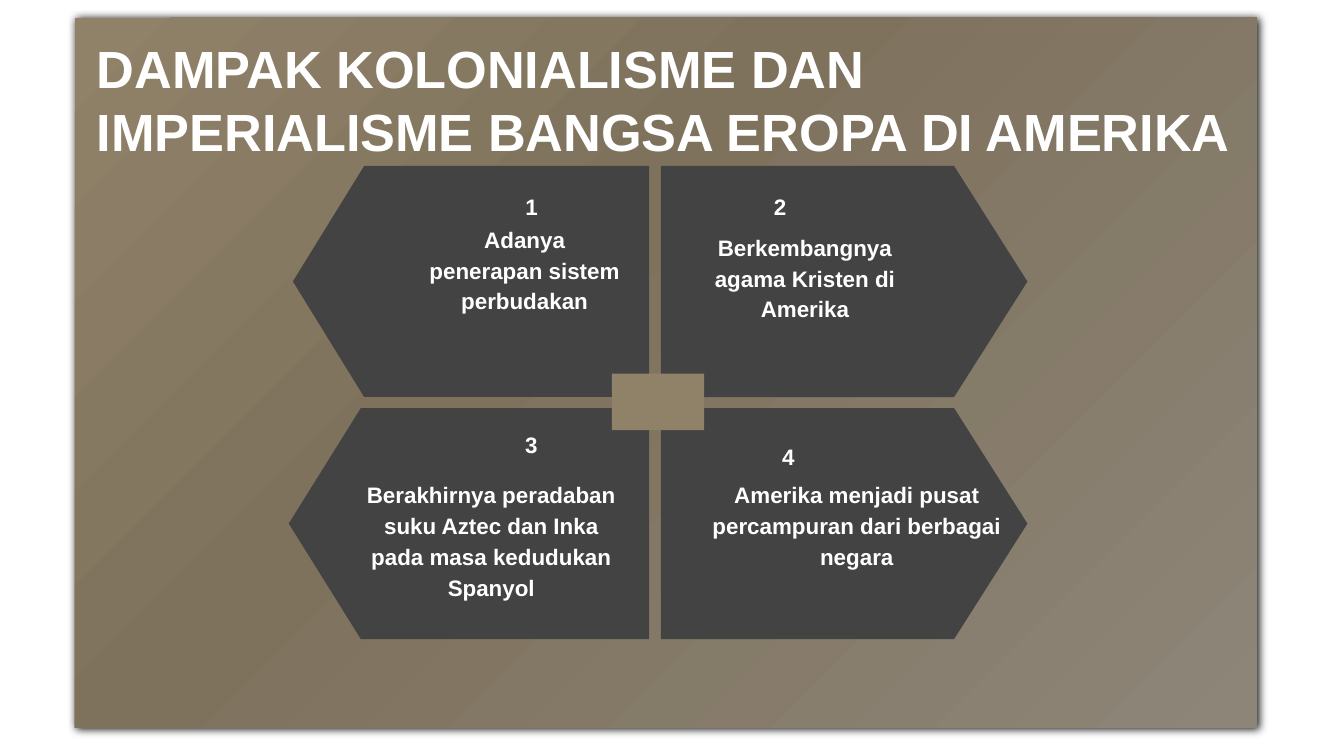
import lxml.etree
import pptx
import pptx.dml.color
import pptx.enum.shapes
import pptx.enum.text
import pptx.oxml
import pptx.util

Pt = pptx.util.Pt
MSO_SHAPE = pptx.enum.shapes.MSO_SHAPE
PP_ALIGN = pptx.enum.text.PP_ALIGN
MSO_ANCHOR = pptx.enum.text.MSO_ANCHOR

COLORS = {"white": "FFFFFF", "card": "434343", "center": "908269",
          "panel_start": "908269", "panel_middle": "7F725D",
          "panel_end": "8D8578", "shadow": "000000"}
FONT = "Arial"
TITLE = "DAMPAK KOLONIALISME DAN IMPERIALISME BANGSA EROPA DI AMERIKA"

# Boxes are (left, top, width, height) in points.
TITLE_BOX = (44.64, 12.24, 628.5, 82)
PANEL_BOX = (40.2, 9.6, 633.2, 380.2)
CENTER_BOX = (327.8, 200.2, 49.4, 30.2)
LEFT_EDGE, RIGHT_EDGE = 347.7, 354
ROW_TOPS = (88.9, 218.6)
CARD_HEIGHT = 123.8
IMPACTS = [
    {"number": "1", "text": "Adanya penerapan sistem perbudakan",
     "row": 0, "points_left": True, "length": 190.8,
     "number_box": (232.6, 95.8, 104.4, 30.2), "text_box": (221, 111.6, 120.2, 59)},
    {"number": "2", "text": "Berkembangnya agama Kristen di Amerika",
     "row": 0, "points_left": False, "length": 196.4,
     "number_box": (368.6, 95.8, 98.6, 30.2), "text_box": (360.7, 115.9, 141.1, 86.4)},
    {"number": "3", "text": "Berakhirnya peradaban suku Aztec dan Inka pada masa kedudukan Spanyol",
     "row": 1, "points_left": True, "length": 193,
     "number_box": (235.4, 223.2, 98.6, 30.2), "text_box": (189.4, 248.4, 147.6, 59)},
    {"number": "4", "text": "Amerika menjadi pusat percampuran dari berbagai negara",
     "row": 1, "points_left": False, "length": 196.4,
     "number_box": (373, 229.7, 98.6, 30.2), "text_box": (356.4, 248.4, 205.2, 59)},
]
NAMESPACE = 'xmlns:a="http://schemas.openxmlformats.org/drawingml/2006/main"'
PANEL_GRADIENT = f"""<a:gradFill {NAMESPACE} rotWithShape="1"><a:gsLst>
<a:gs pos="0"><a:srgbClr val="{COLORS['panel_start']}"/></a:gs>
<a:gs pos="40000"><a:srgbClr val="{COLORS['panel_middle']}"/></a:gs>
<a:gs pos="100000"><a:srgbClr val="{COLORS['panel_end']}"/></a:gs>
</a:gsLst><a:lin ang="2700000" scaled="0"/></a:gradFill>"""
PANEL_SHADOW = f"""<a:effectLst {NAMESPACE}>
<a:outerShdw blurRad="57150" dist="19050" dir="1740000" algn="bl" rotWithShape="0">
<a:srgbClr val="{COLORS['shadow']}"><a:alpha val="91000"/></a:srgbClr>
</a:outerShdw></a:effectLst>"""


def rgb(name):
    return pptx.dml.color.RGBColor.from_string(COLORS[name])


def add_filled_shape(slide, kind, box, color):
    shape = slide.shapes.add_shape(kind, *map(Pt, box))
    shape.shadow.inherit = False
    shape.fill.solid()
    shape.fill.fore_color.rgb = rgb(color)
    shape.line.fill.background()
    return shape


def write_text(shape, text, size, alignment, anchor):
    frame = shape.text_frame
    frame.word_wrap = True
    frame.auto_size = pptx.enum.text.MSO_AUTO_SIZE.NONE
    frame.vertical_anchor = anchor
    frame.margin_left = frame.margin_right = Pt(7.2)
    frame.margin_top = frame.margin_bottom = Pt(7.2)
    frame.text = text
    paragraph = frame.paragraphs[0]
    paragraph.alignment = alignment
    paragraph.font.name = FONT
    paragraph.font.size = Pt(size)
    paragraph.font.bold = True
    paragraph.font.color.rgb = rgb("white")
    return paragraph


def add_panel(slide):
    panel = add_filled_shape(slide, MSO_SHAPE.RECTANGLE, PANEL_BOX, "panel_start")
    properties = panel.element.spPr
    for tag, markup in (("solidFill", PANEL_GRADIENT), ("effectLst", PANEL_SHADOW)):
        current = properties.find(pptx.oxml.ns.qn(f"a:{tag}"))
        properties.replace(current, lxml.etree.fromstring(markup))
    return panel


def add_card(slide, impact):
    """Draw a downward connector shape turned so that its tip points sideways."""
    length = impact["length"]
    left = LEFT_EDGE - length if impact["points_left"] else RIGHT_EDGE
    shift = (length - CARD_HEIGHT) / 2
    box = (left + shift, ROW_TOPS[impact["row"]] - shift, CARD_HEIGHT, length)
    card = add_filled_shape(slide, MSO_SHAPE.FLOWCHART_OFFPAGE_CONNECTOR, box, "card")
    card.rotation = 90 if impact["points_left"] else 270


def add_labels(slide, impact):
    number = slide.shapes.add_textbox(*map(Pt, impact["number_box"]))
    write_text(number, impact["number"], 12, PP_ALIGN.CENTER, MSO_ANCHOR.MIDDLE)
    description = slide.shapes.add_textbox(*map(Pt, impact["text_box"]))
    paragraph = write_text(description, impact["text"], 12, PP_ALIGN.CENTER, MSO_ANCHOR.TOP)
    paragraph.line_spacing = 1.15


def main():
    presentation = pptx.Presentation()
    presentation.slide_width = Pt(720)
    presentation.slide_height = Pt(405)
    slide = presentation.slides.add_slide(presentation.slide_layouts.get_by_name("Title Only"))

    title = slide.shapes.title
    title.left, title.top, title.width, title.height = map(Pt, TITLE_BOX)
    write_text(title, TITLE, 28, PP_ALIGN.LEFT, MSO_ANCHOR.TOP)
    title.element.addprevious(add_panel(slide).element)

    for impact in IMPACTS:
        add_card(slide, impact)
    add_filled_shape(slide, MSO_SHAPE.RECTANGLE, CENTER_BOX, "center")
    for impact in IMPACTS:
        add_labels(slide, impact)
    presentation.save("out.pptx")


if __name__ == "__main__":
    main()
